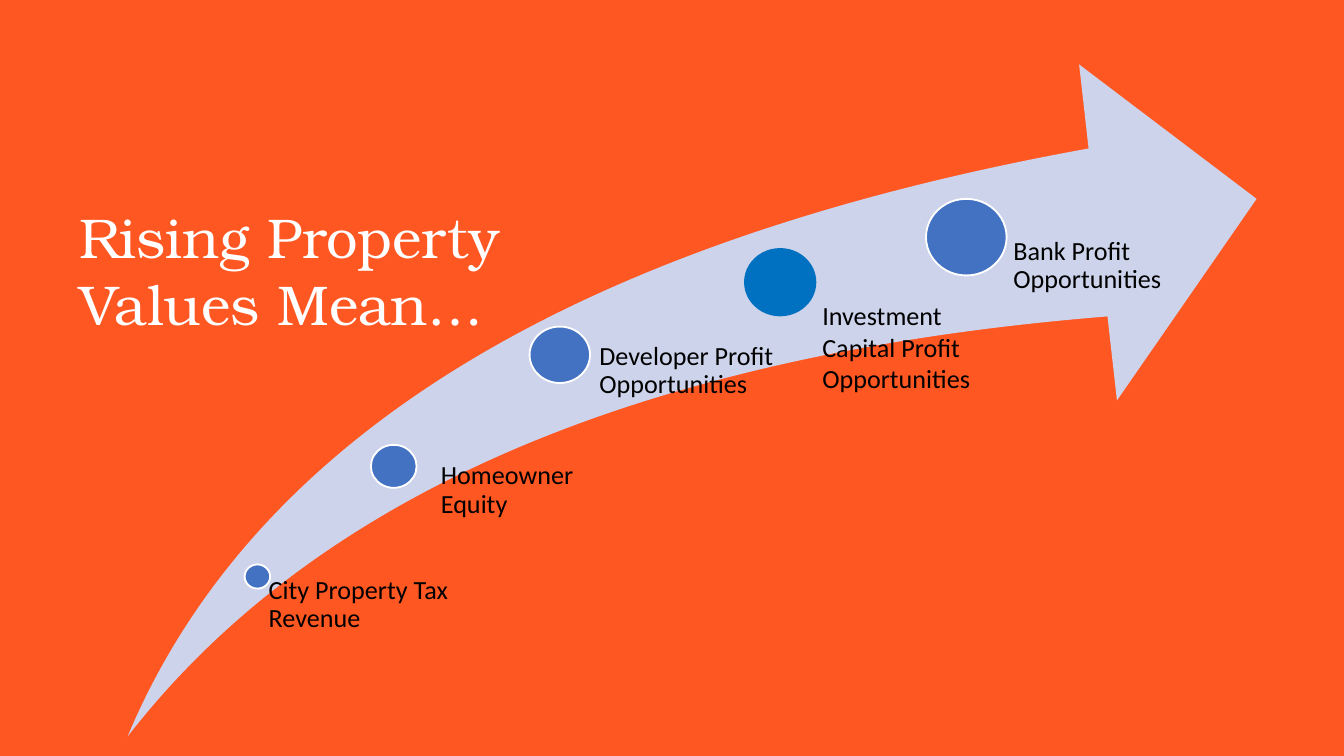
from dataclasses import dataclass

from pptx import Presentation
from pptx.dml.color import RGBColor
from pptx.enum.shapes import MSO_SHAPE
from pptx.enum.text import MSO_ANCHOR, MSO_AUTO_SIZE, PP_ALIGN
from pptx.util import Inches, Pt

ARROW, OVAL = MSO_SHAPE.SWOOSH_ARROW, MSO_SHAPE.OVAL
LEFT = PP_ALIGN.LEFT
TOP, MIDDLE = MSO_ANCHOR.TOP, MSO_ANCHOR.MIDDLE
NO_AUTOFIT = MSO_AUTO_SIZE.NONE
TITLE_ONLY = 5

COLORS = {
    "background": "FF5722",
    "title": "FFFFFF",
    "arrow": "CCD3EA",
    "dot": "4372C3",
    "outline": "FFFFFF",
    "highlight": "0070C0",
    "label": "000000",
}


@dataclass(frozen=True)
class Box:
    left: float
    top: float
    width: float
    height: float

    def lengths(self) -> tuple:
        return tuple(Inches(v) for v in (self.left, self.top, self.width, self.height))


@dataclass(frozen=True)
class Milestone:
    text: str
    dot: Box
    label: Box
    insets: tuple = (0, 0, 0, 0)  # left, top, right, bottom
    line_spacing: float = 0.9
    fill: str = "dot"
    line: str = "outline"
    line_width: float = 1


MILESTONES = [
    Milestone("City Property Tax Revenue", Box(1.82, 4.2, 0.19, 0.18),
              Box(1.92, 4.29, 1.44, 1.19), (0.08, 0, 0, 0)),
    Milestone("Homeowner Equity", Box(2.76, 3.31, 0.34, 0.32),
              Box(3.14, 3.44, 1.51, 0.49), (0.14, 0, 0, 0)),
    Milestone("Developer Profit Opportunities", Box(3.94, 2.43, 0.45, 0.42),
              Box(4.27, 2.55, 1.76, 0.48), (0.19, 0, 0, 0)),
    Milestone("Bank Profit Opportunities", Box(6.89, 1.48, 0.6, 0.57),
              Box(7.29, 1.77, 1.76, 0.57), (0.25, 0, 0, 0)),
    Milestone("Investment Capital Profit Opportunities", Box(5.55, 1.86, 0.51, 0.48),
              Box(6.02, 2.18, 1.6, 0.81), (0.1, 0.05, 0.1, 0.05), 1.0,
              "highlight", "highlight", 2),
]


def color(name: str) -> RGBColor:
    return RGBColor.from_string(COLORS[name])


def write_text(shape, text: str, font: str, size: float, color_name: str,
               insets: tuple, anchor, line_spacing: float) -> None:
    frame = shape.text_frame
    frame.text = text
    frame.word_wrap = True
    frame.auto_size = NO_AUTOFIT
    frame.vertical_anchor = anchor
    (frame.margin_left, frame.margin_top,
     frame.margin_right, frame.margin_bottom) = (Inches(v) for v in insets)
    paragraph = frame.paragraphs[0]
    paragraph.alignment = LEFT
    paragraph.line_spacing = line_spacing
    run_font = paragraph.runs[0].font
    run_font.name = font
    run_font.size = Pt(size)
    run_font.color.rgb = color(color_name)


def add_filled_shape(slide, kind, box: Box, fill: str):
    shape = slide.shapes.add_shape(kind, *box.lengths())
    shape.shadow.inherit = False
    shape.fill.solid()
    shape.fill.fore_color.rgb = color(fill)
    shape.line.fill.background()
    return shape


def add_milestone(slide, milestone: Milestone) -> None:
    dot = add_filled_shape(slide, OVAL, milestone.dot, milestone.fill)
    dot.line.color.rgb = color(milestone.line)
    dot.line.width = Pt(milestone.line_width)
    label = slide.shapes.add_textbox(*milestone.label.lengths())
    write_text(label, milestone.text, "Calibri", 14, "label",
               milestone.insets, TOP, milestone.line_spacing)


def main() -> None:
    # Widescreen slide, 16:9
    presentation = Presentation()
    presentation.slide_width = Inches(10)
    presentation.slide_height = Inches(10 * 9 / 16)
    slide = presentation.slides.add_slide(presentation.slide_layouts[TITLE_ONLY])
    slide.background.fill.solid()
    slide.background.fill.fore_color.rgb = color("background")

    # Title, raised above the middle by a deep bottom margin
    title = slide.shapes.title
    title.left, title.top, title.width, title.height = Box(0.49, 0.28, 4.51, 4.25).lengths()
    write_text(title, "Rising Property Values Mean…", "TeX Gyre Bonum", 30, "title",
               (0.1, 0.1, 0.1, 0.9), MIDDLE, 1.0)

    # Rising arrow
    arrow = add_filled_shape(slide, ARROW, Box(0.95, 0.48, 8.4, 5), "arrow")
    arrow.adjustments[0] = 0.25
    arrow.adjustments[1] = 0.25

    # Dots and labels along the arrow
    for milestone in MILESTONES:
        add_milestone(slide, milestone)

    presentation.save("out.pptx")


if __name__ == "__main__":
    main()
